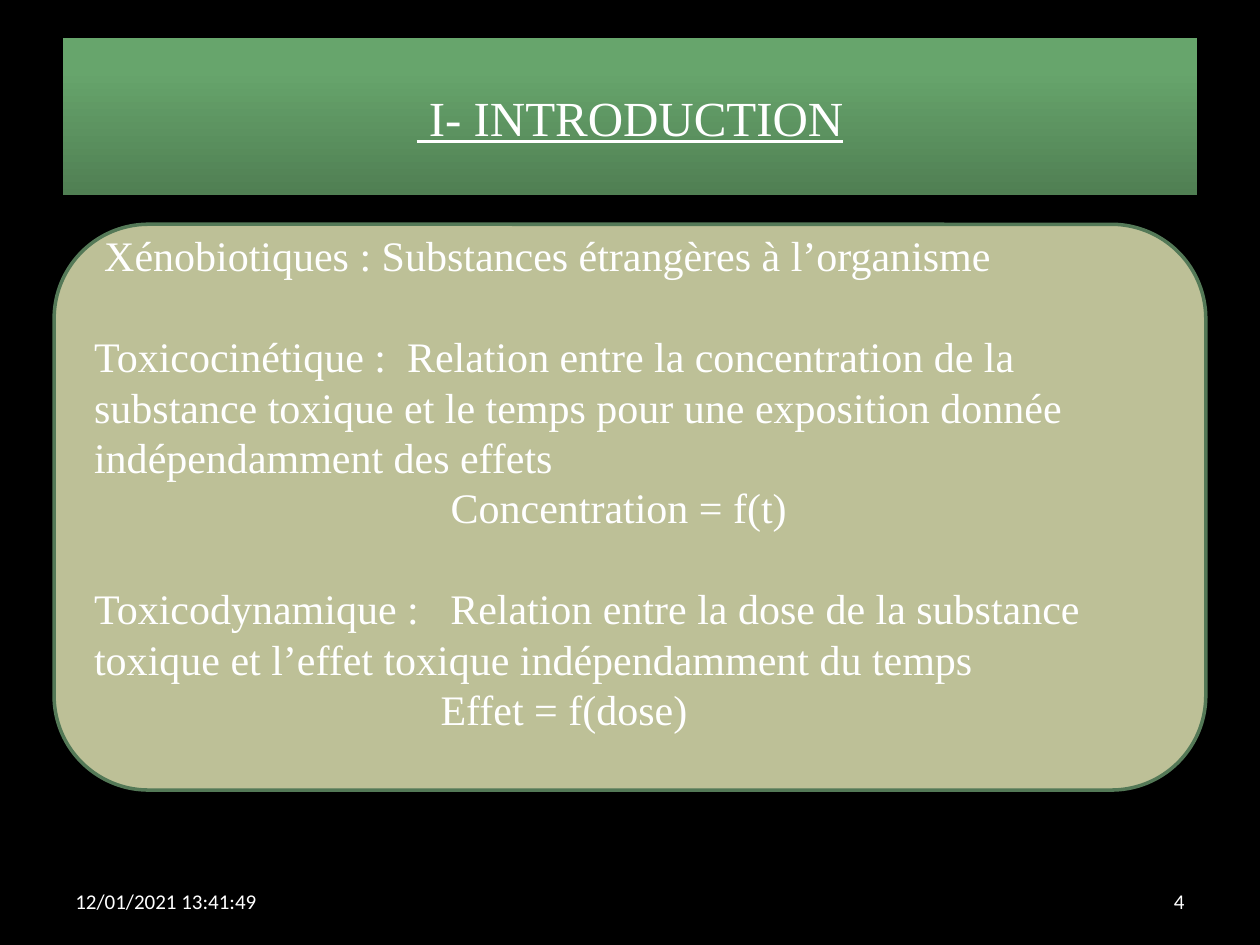
import copy
from typing import NamedTuple

import pptx
import pptx.util
from pptx.dml.color import RGBColor
from pptx.enum.shapes import MSO_SHAPE
from pptx.enum.text import MSO_ANCHOR, PP_ALIGN
from pptx.util import Inches

BLACK = RGBColor(0x00, 0x00, 0x00)
WHITE = RGBColor(0xFF, 0xFF, 0xFF)
SAND = RGBColor(0xBD, 0xC0, 0x97)
EDGE = RGBColor(0x54, 0x79, 0x57)
GREENS = (
    (0.0, RGBColor(0x50, 0x7F, 0x53)),
    (0.8, RGBColor(0x67, 0xA5, 0x6C)),
    (1.0, RGBColor(0x67, 0xA7, 0x6C)),
)
LEAD = pptx.util.Pt(28.8)  # height of one line in the panel


class Box(NamedTuple):
    left: float
    top: float
    width: float
    height: float


class Para(NamedTuple):
    text: str
    indent: float = 0
    gap: bool = False  # one line of space above


BANNER = Box(0.5, 0.3, 9, 1.25)
PANEL = Box(0.43, 1.78, 9.14, 4.49)
DATE = Box(0.5, 6.95, 2.33, 0.4)
NUMBER = Box(7.17, 6.95, 2.33, 0.4)

SERIF = {"name": "Times New Roman", "size": pptx.util.Pt(24)}
TITLE = {"name": "Times New Roman", "size": pptx.util.Pt(28), "underline": True}
SMALL = {"name": "Calibri", "size": pptx.util.Pt(12)}

PARAS = (
    Para("Xénobiotiques : Substances étrangères à l’organisme", 0.08),
    Para("Toxicocinétique :  Relation entre la concentration de la substance "
         "toxique et le temps pour une exposition donnée indépendamment des effets",
         gap=True),
    Para("Concentration = f(t)", 2.83),
    Para("Toxicodynamique :   Relation entre la dose de la substance toxique "
         "et l’effet toxique indépendamment du temps", gap=True),
    Para("Effet = f(dose)", 2.75),
)


def place(box: Box) -> list:
    return [Inches(side) for side in box]


def write(shape, paras, style: dict, align=PP_ALIGN.LEFT) -> None:
    frame = shape.text_frame
    frame.word_wrap = True
    frame.vertical_anchor = MSO_ANCHOR.MIDDLE
    for i, item in enumerate(paras):
        para = frame.add_paragraph() if i else frame.paragraphs[0]
        para.alignment = align
        if item.indent:
            para._p.get_or_add_pPr().set("marL", str(Inches(item.indent)))
        if item.gap:
            para.space_before = LEAD
        run = para.add_run()
        run.text = item.text
        run.font.color.rgb = WHITE
        for key, value in style.items():
            setattr(run.font, key, value)


def shade(fill) -> None:
    """Fill with the three greens, the darkest at the bottom."""
    fill.gradient()
    fill.gradient_angle = 90
    stops = fill.gradient_stops
    last = stops[1]._gs
    last.addnext(copy.deepcopy(last))
    for stop, (pos, color) in zip(fill.gradient_stops, GREENS):
        stop.position = pos
        stop.color.rgb = color


def add_panel(slide) -> None:
    panel = slide.shapes.add_shape(MSO_SHAPE.ROUNDED_RECTANGLE, *place(PANEL))
    panel.shadow.inherit = False
    panel.fill.solid()
    panel.fill.fore_color.rgb = SAND
    panel.line.color.rgb = EDGE
    panel.line.width = pptx.util.Pt(2)
    write(panel, PARAS, SERIF)
    panel.text_frame.margin_bottom = Inches(0.05) + LEAD
    for para in panel.text_frame.paragraphs:
        para.line_spacing = LEAD


def add_banner(slide) -> None:
    banner = slide.shapes.add_shape(MSO_SHAPE.RECTANGLE, *place(BANNER))
    banner.shadow.inherit = False
    banner.line.fill.background()
    shade(banner.fill)
    write(banner, [Para(" I- INTRODUCTION")], TITLE, PP_ALIGN.CENTER)


def add_note(slide, box: Box, text: str, align) -> None:
    note = slide.shapes.add_textbox(*place(box))
    write(note, [Para(text)], SMALL, align)


def main() -> None:
    deck = pptx.Presentation()
    deck.slide_width, deck.slide_height = Inches(10), Inches(7.5)
    slide = deck.slides.add_slide(deck.slide_layouts[6])
    slide.background.fill.solid()
    slide.background.fill.fore_color.rgb = BLACK
    add_note(slide, DATE, "12/01/2021 13:41:49", PP_ALIGN.LEFT)
    add_note(slide, NUMBER, "4", PP_ALIGN.RIGHT)
    add_panel(slide)
    add_banner(slide)
    deck.save("out.pptx")


if __name__ == "__main__":
    main()
